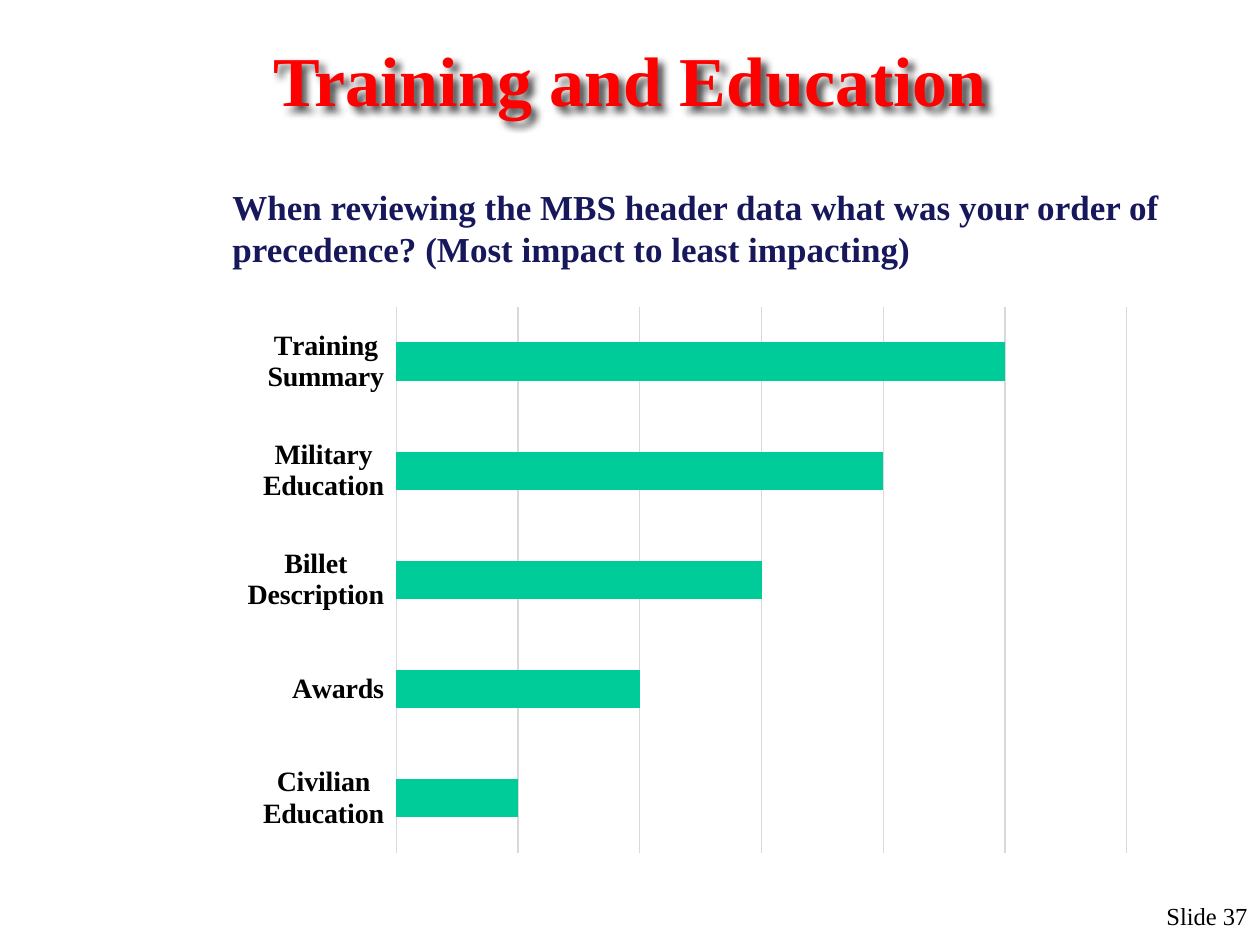
from lxml import etree
from pptx import Presentation
from pptx.chart.data import CategoryChartData
from pptx.dml.color import RGBColor
from pptx.enum.chart import XL_CHART_TYPE, XL_TICK_LABEL_POSITION, XL_TICK_MARK
from pptx.enum.text import MSO_ANCHOR, PP_ALIGN
from pptx.oxml import parse_xml
from pptx.oxml.ns import nsdecls, qn
from pptx.util import Pt

BAR = XL_CHART_TYPE.BAR_CLUSTERED
LABELS_LOW = XL_TICK_LABEL_POSITION.LOW
NO_TICK = XL_TICK_MARK.NONE
MIDDLE = MSO_ANCHOR.MIDDLE
LEFT, CENTER, RIGHT = PP_ALIGN.LEFT, PP_ALIGN.CENTER, PP_ALIGN.RIGHT

SERIF = "Times New Roman"
COLORS = {
    "title": "FF0000",
    "outline": "8E0000",
    "question": "17175C",
    "text": "000000",
    "bar": "00CC99",
    "grid": "D9D9D9",
}
PRECEDENCE = {
    "Civilian Education": 20,
    "Awards": 40,
    "Billet Description": 60,
    "Military Education": 80,
    "Training Summary": 100,
}
PLOT_AREA = {"x": 0.2, "y": 0.05, "w": 0.74, "h": 0.9}


def px(length):
    """Turn pixels into EMU at 126 pixels to the inch."""
    return round(length * 914400 / 126)


def color(name):
    """Look up a named colour."""
    return RGBColor.from_string(COLORS[name])


def style_font(font, size, color_name, bold=False):
    """Format a font in the serif face."""
    font.name = SERIF
    font.size = Pt(size)
    font.bold = bold
    font.color.rgb = color(color_name)


def style_line(line):
    """Format a thin grid line."""
    line.color.rgb = color("grid")
    line.width = Pt(0.75)


def place(shape, left, top, width, height):
    """Position a shape in pixels."""
    shape.left, shape.top = px(left), px(top)
    shape.width, shape.height = px(width), px(height)


def set_text(shape, text, size, color_name, bold, align):
    """Write one formatted paragraph and return its run."""
    frame = shape.text_frame
    frame.text = text
    frame.word_wrap = True
    para = frame.paragraphs[0]
    para.alignment = align
    span = para.runs[0]
    style_font(span.font, size, color_name, bold)
    return span


def add_title(page, text):
    """Fill the title with outlined, shadowed text."""
    title = page.shapes.title
    place(title, 0, 42, 1260, 73)
    span = set_text(title, text, 40, "title", True, CENTER)
    title.text_frame.vertical_anchor = MIDDLE
    span.font._element.insert(0, parse_xml(
        f'<a:ln {nsdecls("a")} w="9525"><a:solidFill>'
        f'<a:srgbClr val="{COLORS["outline"]}"/></a:solidFill></a:ln>'))
    title._element.spPr.append(parse_xml(
        f'<a:effectLst {nsdecls("a")}>'
        '<a:outerShdw blurRad="50800" dist="50800" dir="2700000" algn="tl">'
        '<a:srgbClr val="000000"><a:alpha val="70000"/></a:srgbClr>'
        '</a:outerShdw></a:effectLst>'))


def add_text(page, bounds, text, size, color_name, bold=False, align=LEFT):
    """Add a wrapped text box."""
    box = page.shapes.add_textbox(*map(px, bounds))
    set_text(box, text, size, color_name, bold, align)


def fix_plot_area(chart):
    """Set the inner plot area as fractions of the chart."""
    plot_area = chart._chartSpace.chart.plotArea
    for old in plot_area.findall(qn("c:layout")):
        plot_area.remove(old)
    layout = etree.Element(qn("c:layout"))
    manual = etree.SubElement(layout, qn("c:manualLayout"))
    settings = {"layoutTarget": "inner", "xMode": "edge", "yMode": "edge"}
    for tag, value in (settings | PLOT_AREA).items():
        etree.SubElement(manual, qn(f"c:{tag}")).set("val", str(value))
    plot_area.insert(0, layout)


def add_bar_chart(page, bounds, values):
    """Add a horizontal bar chart with vertical grid lines."""
    data = CategoryChartData()
    data.categories = list(values)
    data.add_series("Series 1", list(values.values()))
    chart = page.shapes.add_chart(BAR, *map(px, bounds), data).chart
    chart.has_legend = chart.has_title = False
    chart.font.name = "Arial"
    chart.font.size = Pt(10)
    chart.font.color.rgb = color("text")

    plot = chart.plots[0]
    plot.gap_width = 182
    plot.vary_by_categories = False
    fill = plot.series[0].format.fill
    fill.solid()
    fill.fore_color.rgb = color("bar")

    categories = chart.category_axis
    categories.major_tick_mark = categories.minor_tick_mark = NO_TICK
    categories.tick_label_position = LABELS_LOW
    style_font(categories.tick_labels.font, 16, "text", True)
    style_line(categories.format.line)

    scale = chart.value_axis
    scale.visible = False
    scale.minimum_scale, scale.maximum_scale, scale.major_unit = 0, 120, 20
    scale.has_major_gridlines = True
    style_line(scale.major_gridlines.format.line)
    fix_plot_area(chart)


def main():
    """Build the slide and save it."""
    deck = Presentation()
    deck.slide_width, deck.slide_height = px(1260), px(945)
    page = deck.slides.add_slide(deck.slide_layouts[5])
    add_text(page, (959, 895, 301, 50), "Slide 37", 14, "text", align=RIGHT)
    add_title(page, "Training and Education")
    add_text(page, (220, 179, 1008, 84),
             "When reviewing the MBS header data what was your order of "
             "precedence? (Most impact to least impacting)",
             20, "question", bold=True)
    add_bar_chart(page, (199, 277, 987, 606), PRECEDENCE)
    deck.save("out.pptx")


if __name__ == "__main__":
    main()
